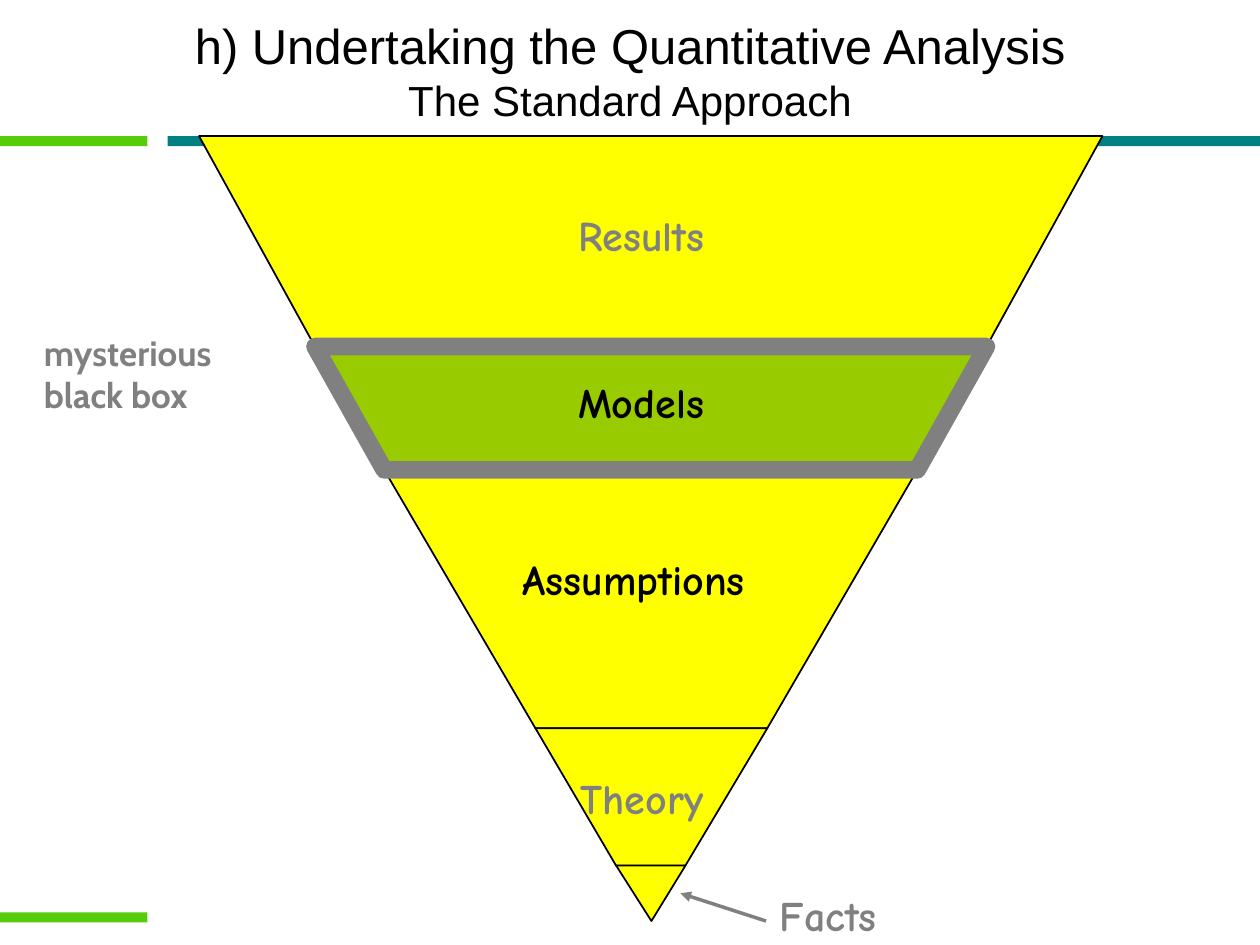
"""Build the inverted pyramid slide on the standard quantitative approach."""
from lxml.etree import SubElement
from pptx import Presentation
from pptx.dml.color import RGBColor
from pptx.enum.shapes import MSO_CONNECTOR as LINE, MSO_SHAPE as SHAPE
from pptx.enum.text import MSO_ANCHOR as ANCHOR, MSO_AUTO_SIZE as FIT, PP_ALIGN as ALIGN
from pptx.oxml.ns import qn
from pptx.util import Inches, Pt

GREY, BLACK, YELLOW = "808080", "000000", "FFFF00"
TITLE = [("h) Undertaking the Quantitative Analysis", 28), ("The Standard Approach", 24)]
BARS = [
    (1.33, 1.08, 8.67, "008080"),
    (0, 1.08, 1.17, "56CC0B"),
    (0, 7.24, 1.17, "56CC0B"),
]
EDGES = [
    (1.08, 1.58, 8.75),
    (2.75, 2.5, 7.83),
    (3.73, 3.05, 7.28),
    (5.78, 4.25, 6.09),
    (6.87, 4.89, 5.44),
    (7.31, 5.17, 5.17),
]
MODELS = 1
LABELS = [
    ("Results", (4.49, 1.61, 1.34, 0.5), GREY),
    ("Models", (4.49, 2.94, 1.3, 0.5), BLACK),
    ("Assumptions", (4.05, 4.34, 2.14, 0.5), BLACK),
    ("Theory", (4.51, 6.08, 1.33, 0.5), GREY),
    ("Facts", (6.09, 7.01, 1.08, 0.5), GREY),
]
NOTE = ("mysterious black box", (0.25, 2.58, 1.92, 0.77), GREY)
ARROW = (6.08, 7.31, 5.4, 7.09)


def tint(color, code):
    color.rgb = RGBColor.from_string(code)


def style(font, code, **values):
    for name, value in values.items():
        setattr(font, name, value)
    tint(font.color, code)


def paint(shape, fill, line=None, width=1):
    shape.shadow.inherit = False
    shape.fill.solid()
    tint(shape.fill.fore_color, fill)
    if line:
        tint(shape.line.color, line)
        shape.line.width = Pt(width)
    else:
        shape.line.fill.background()


def add_title(slide):
    title = slide.shapes.title
    title.left, title.top, title.width, title.height = map(Inches, (0, 0.14, 10, 0.83))
    frame = title.text_frame
    frame.auto_size, frame.vertical_anchor = FIT.NONE, ANCHOR.MIDDLE
    frame.text = "\n".join(text for text, size in TITLE)
    for para, (text, size) in zip(frame.paragraphs, TITLE):
        para.alignment = ALIGN.CENTER
        style(para.runs[0].font, BLACK, name="Arial", size=Pt(size))


def add_bar(slide, left, top, width, code):
    box = map(Inches, (left, top, width, 0.08))
    paint(slide.shapes.add_shape(SHAPE.RECTANGLE, *box), code)


def add_band(slide, upper, lower, *look):
    (top, left, right), (base, start, end) = upper, lower
    points = [(right, top), (end, base), (start, base)]
    pen = slide.shapes.build_freeform(Inches(left), Inches(top))
    pen.add_line_segments([(Inches(x), Inches(y)) for x, y in points])
    paint(pen.convert_to_shape(), *look)


def add_text(slide, text, box, code, face, size, wrap):
    frame = slide.shapes.add_textbox(*map(Inches, box)).text_frame
    frame.word_wrap, frame.auto_size = wrap, FIT.SHAPE_TO_FIT_TEXT
    frame.text = text
    style(frame.paragraphs[0].runs[0].font, code, name=face, size=Pt(size), bold=True)


def add_arrow(slide):
    arrow = slide.shapes.add_connector(LINE.STRAIGHT, *map(Inches, ARROW))
    tint(arrow.line.color, GREY)
    arrow.line.width = Pt(2)
    SubElement(arrow.line._get_or_add_ln(), qn("a:tailEnd"), type="triangle")
    SubElement(arrow._element.spPr, qn("a:effectLst"))


def main():
    deck = Presentation()
    deck.slide_width, deck.slide_height = Inches(10), Inches(7.5)
    slide = deck.slides.add_slide(deck.slide_layouts[5])
    add_title(slide)
    for bar in BARS:
        add_bar(slide, *bar)
    bands = list(zip(EDGES, EDGES[1:]))
    for index, band in enumerate(bands):
        if index != MODELS:
            add_band(slide, *band, YELLOW, BLACK)
    add_band(slide, *bands[MODELS], "99CC00", GREY, 10)
    for label in LABELS:
        add_text(slide, *label, "Comic Neue", 24, False)
    add_text(slide, *NOTE, "Cabin", 20, True)
    add_arrow(slide)
    deck.save("out.pptx")


if __name__ == "__main__":
    main()
